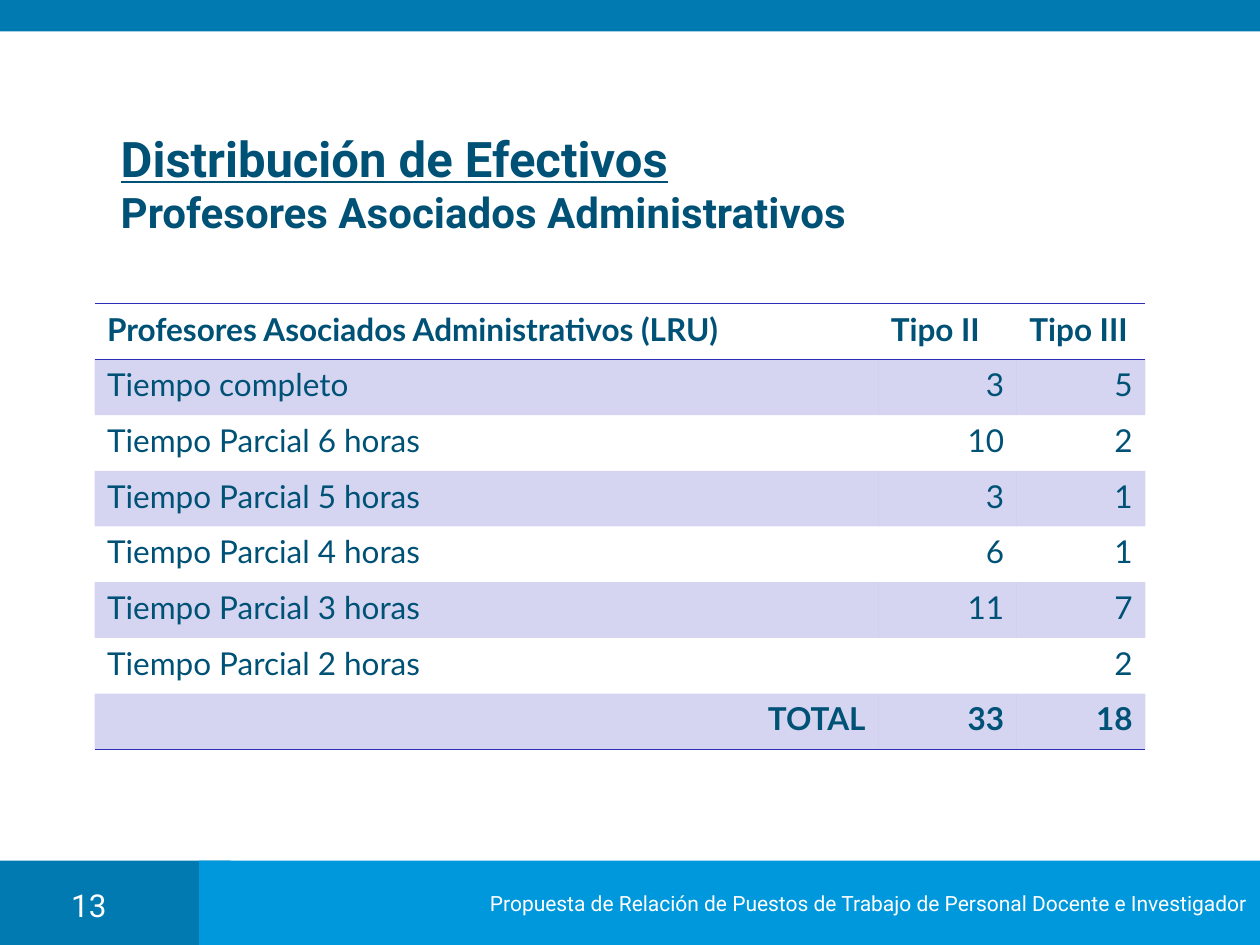
from lxml.etree import SubElement
from pptx import Presentation
from pptx.dml.color import RGBColor
from pptx.enum.shapes import MSO_SHAPE
from pptx.enum.text import MSO_ANCHOR, PP_ALIGN
from pptx.oxml import parse_xml
from pptx.oxml.ns import nsdecls, qn
from pptx.util import Inches, Pt

# Content
TITLE = "Distribución de Efectivos"
SUBTITLE = "Profesores Asociados Administrativos"
FOOTER = "Propuesta de Relación de Puestos de Trabajo de Personal Docente e Investigador"
PAGE_NUMBER = "13"
ROWS = [
    ("Profesores Asociados Administrativos (LRU)", "Tipo II", "Tipo III"),
    ("Tiempo completo", "3", "5"),
    ("Tiempo Parcial 6 horas", "10", "2"),
    ("Tiempo Parcial 5 horas", "3", "1"),
    ("Tiempo Parcial 4 horas", "6", "1"),
    ("Tiempo Parcial 3 horas", "11", "7"),
    ("Tiempo Parcial 2 horas", "", "2"),
    ("TOTAL", "33", "18"),
]
COLUMN_WIDTHS = [6.22, 1.1, 1.02]
TABLE_LEFT, TABLE_TOP, TABLE_HEIGHT = 0.75, 2.41, 3.54

# Style
DARK_BLUE, LIGHT_BLUE, WHITE = "007AB1", "0098DC", "FFFFFF"
TEXT_BLUE, TABLE_BLUE = "005176", "2D2DB9"
BAND_OPACITY = 20
NO_TABLE_STYLE = "{2D5ABB26-0587-4C30-8999-92F81FD0307C}"


def color(value):
    return RGBColor.from_string(value)


def format_runs(paragraph, size, font_name, font_color, bold=False):
    for run in paragraph.runs:
        run.font.size = Pt(size)
        run.font.name = font_name
        run.font.bold = bold
        run.font.color.rgb = color(font_color)


def add_bar(slide, left, top, width, height, fill):
    shape = slide.shapes.add_shape(
        MSO_SHAPE.RECTANGLE, Inches(left), Inches(top), Inches(width), Inches(height))
    shape.shadow.inherit = False
    shape.fill.solid()
    shape.fill.fore_color.rgb = color(fill)
    shape.line.fill.background()
    return shape


def add_text(slide, left, top, width, height, text):
    box = slide.shapes.add_textbox(
        Inches(left), Inches(top), Inches(width), Inches(height))
    box.text_frame.word_wrap = True
    box.text_frame.text = text
    return box.text_frame


def shade(cell):
    cell.fill.solid()
    cell.fill.fore_color.rgb = color(TABLE_BLUE)
    fill_color = cell.fill._xPr.find(qn("a:solidFill")).find(qn("a:srgbClr"))
    SubElement(fill_color, qn("a:alpha")).set("val", str(BAND_OPACITY * 1000))


def add_borders(cell, sides):
    properties = cell._tc.get_or_add_tcPr()
    for position, side in enumerate(sides):
        properties.insert(position, parse_xml(
            f'<a:ln{side} {nsdecls("a")} w="{Pt(1)}"><a:solidFill>'
            f'<a:srgbClr val="{TABLE_BLUE}"/></a:solidFill></a:ln{side}>'))


def add_staff_table(slide):
    frame = slide.shapes.add_table(
        len(ROWS), len(COLUMN_WIDTHS), Inches(TABLE_LEFT), Inches(TABLE_TOP),
        Inches(sum(COLUMN_WIDTHS)), Inches(TABLE_HEIGHT))
    table = frame.table
    table._tbl.tblPr.find(qn("a:tableStyleId")).text = NO_TABLE_STYLE
    for column, width in zip(table.columns, COLUMN_WIDTHS):
        column.width = Inches(width)

    last = len(ROWS) - 1
    borders = {0: "TB", last: "B"}
    for row_index, values in enumerate(ROWS):
        for column_index, value in enumerate(values):
            cell = table.cell(row_index, column_index)
            cell.text_frame.text = value
            paragraph = cell.text_frame.paragraphs[0]
            format_runs(paragraph, 18, "Lato", TEXT_BLUE, row_index in (0, last))
            if row_index == last or (row_index > 0 and column_index > 0):
                paragraph.alignment = PP_ALIGN.RIGHT
            if row_index % 2:
                shade(cell)
            else:
                cell.fill.background()
            add_borders(cell, borders.get(row_index, ""))


def main():
    presentation = Presentation()
    presentation.slide_width, presentation.slide_height = Inches(10), Inches(7.5)
    slide = presentation.slides.add_slide(presentation.slide_layouts[6])

    # Bars and footer
    add_bar(slide, 0, 6.83, 1.83, 0.67, DARK_BLUE)
    footer = add_bar(slide, 1.58, 6.83, 8.42, 0.67, LIGHT_BLUE).text_frame
    footer.text = FOOTER
    footer.vertical_anchor = MSO_ANCHOR.MIDDLE
    footer.paragraphs[0].alignment = PP_ALIGN.RIGHT
    format_runs(footer.paragraphs[0], 12, "Roboto", WHITE)
    add_bar(slide, 0, 0, 10, 0.25, DARK_BLUE)

    # Title
    title = add_text(slide, 0.86, 1.02, 8.35, 0.86, f"{TITLE}\n{SUBTITLE}")
    title.vertical_anchor = MSO_ANCHOR.MIDDLE
    for paragraph, size in zip(title.paragraphs, (28, 24)):
        format_runs(paragraph, size, "Roboto", TEXT_BLUE, bold=True)
    title.paragraphs[0].runs[0].font.underline = True

    add_staff_table(slide)

    # Page number
    number = add_text(slide, 0.35, 6.98, 0.71, 0.32, PAGE_NUMBER).paragraphs[0]
    number.alignment = PP_ALIGN.CENTER
    format_runs(number, 18, "Roboto", WHITE)

    presentation.save("out.pptx")


if __name__ == "__main__":
    main()
